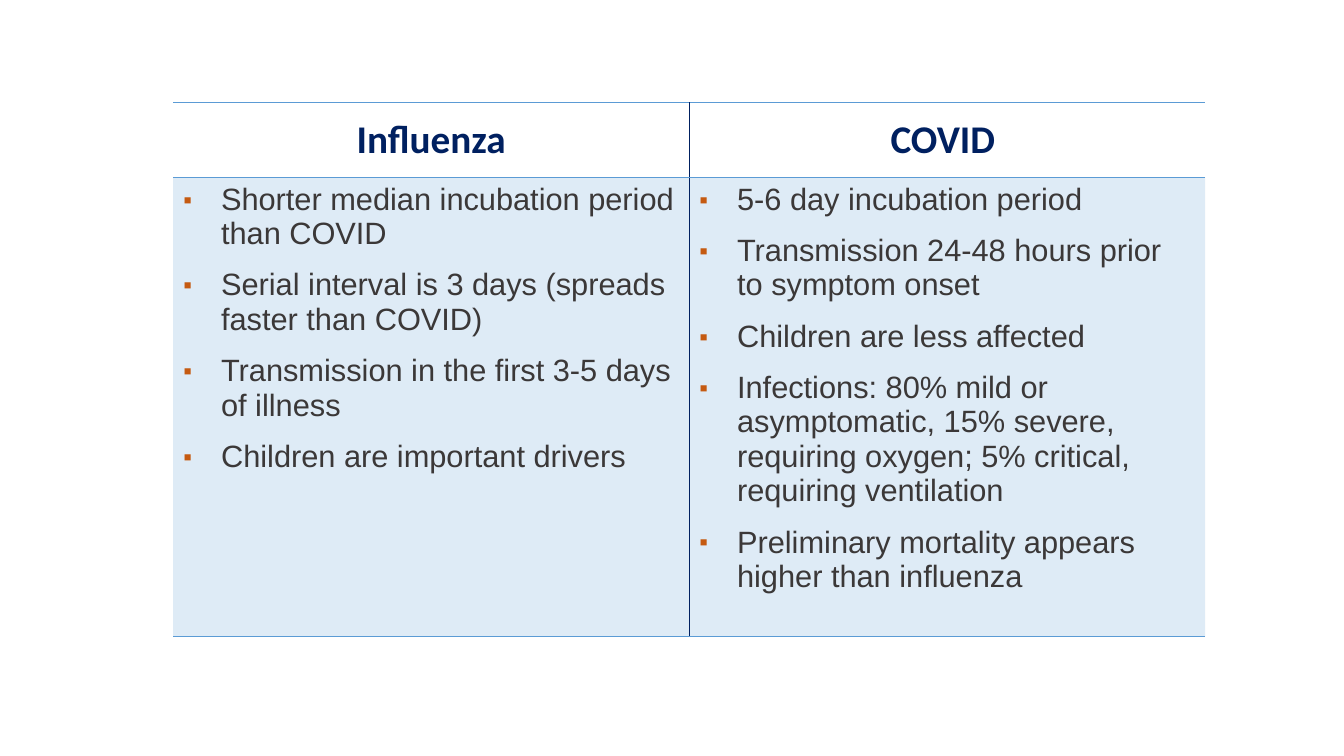
from lxml import etree
from pptx import Presentation
from pptx.dml.color import RGBColor
from pptx.enum.text import MSO_ANCHOR, PP_ALIGN
from pptx.oxml.ns import qn
from pptx.util import Pt

MIDDLE = MSO_ANCHOR.MIDDLE
CENTER = PP_ALIGN.CENTER

COLORS = {"navy": "002060", "blue": "5B9BD5", "text": "3B3838", "bullet": "C55A11"}
PLAIN = "{2D5ABB26-0587-4C30-8999-92F81FD0307C}"

VIRUSES = {
    "Influenza": [
        "Shorter median incubation period than COVID",
        "Serial interval is 3 days (spreads faster than COVID)",
        "Transmission in the first 3-5 days of illness",
        "Children are important drivers",
    ],
    "COVID ": [
        "5-6 day incubation period",
        "Transmission 24-48 hours prior to symptom onset",
        "Children are less affected",
        "Infections: 80% mild or asymptomatic, 15% severe, requiring oxygen; "
        "5% critical, requiring ventilation",
        "Preliminary mortality appears higher than influenza",
    ],
}


class Board:
    indent = Pt(27)
    gap = Pt(12)

    def __init__(self, slide):
        self.slide = slide

    def table(self, left, top, widths, heights):
        width, height = sum(widths), sum(heights)
        frame = self.slide.shapes.add_table(
            len(heights), len(widths), Pt(left), Pt(top), Pt(width), Pt(height))
        table = frame.table
        table.first_row = table.horz_banding = False
        table._tbl.tblPr.find(qn("a:tableStyleId")).text = PLAIN
        for col, size in zip(table.columns, widths):
            col.width = Pt(size)
        for row, size in zip(table.rows, heights):
            row.height = Pt(size)
        return table

    def run(self, para, text, font, size, color, bold=False):
        run = para.add_run()
        run.text = text
        run.font.name = font
        run.font.size = Pt(size)
        run.font.bold = bold
        run.font.color.rgb = RGBColor.from_string(COLORS[color])

    def bullet(self, para):
        props = para._p.get_or_add_pPr()
        props.set("marL", str(self.indent))
        props.set("indent", str(-self.indent))
        tint = etree.SubElement(props, qn("a:buClr"))
        etree.SubElement(tint, qn("a:srgbClr"), val=COLORS["bullet"])
        etree.SubElement(props, qn("a:buSzPct"), val="80000")
        etree.SubElement(props, qn("a:buFont"), typeface="Arial")
        etree.SubElement(props, qn("a:buChar"), char="▪")

    def head(self, cell, text):
        cell.fill.background()
        cell.vertical_anchor = MIDDLE
        para = cell.text_frame.paragraphs[0]
        para.alignment = CENTER
        self.run(para, text, "Calibri", 28, "navy", bold=True)

    def body(self, cell, items):
        cell.fill.solid()
        cell.fill.fore_color.rgb = RGBColor.from_string(COLORS["blue"])
        tint = cell._tc.tcPr.find(".//" + qn("a:srgbClr"))
        etree.SubElement(tint, qn("a:alpha"), val="20000")
        frame = cell.text_frame
        for i, item in enumerate(items):
            para = frame.add_paragraph() if i else frame.paragraphs[0]
            self.bullet(para)
            if i:
                para.space_before = self.gap
            self.run(para, item, "Arial", 22, "text")

    def border(self, cell, sides):
        """Draw the sides given as {"L", "R", "T" or "B": color}; call after the fill."""
        props = cell._tc.get_or_add_tcPr()
        order = [side for side in "LRTB" if side in sides]
        for i, side in enumerate(order):
            line = etree.Element(qn("a:ln" + side), w=str(Pt(1)))
            fill = etree.SubElement(line, qn("a:solidFill"))
            etree.SubElement(fill, qn("a:srgbClr"), val=COLORS[sides[side]])
            props.insert(i, line)


def main():
    deck = Presentation()
    deck.slide_width, deck.slide_height = Pt(960), Pt(540)
    board = Board(deck.slides.add_slide(deck.slide_layouts[6]))
    table = board.table(123.7, 73.3, [368.6, 368.6], [53.4, 328.2])
    for col, (name, facts) in enumerate(VIRUSES.items()):
        top, low = table.cell(0, col), table.cell(1, col)
        board.head(top, name)
        board.body(low, facts)
        inner = "L" if col else "R"
        for cell in (top, low):
            board.border(cell, {inner: "navy", "T": "blue", "B": "blue"})
    deck.save("out.pptx")


if __name__ == "__main__":
    main()
